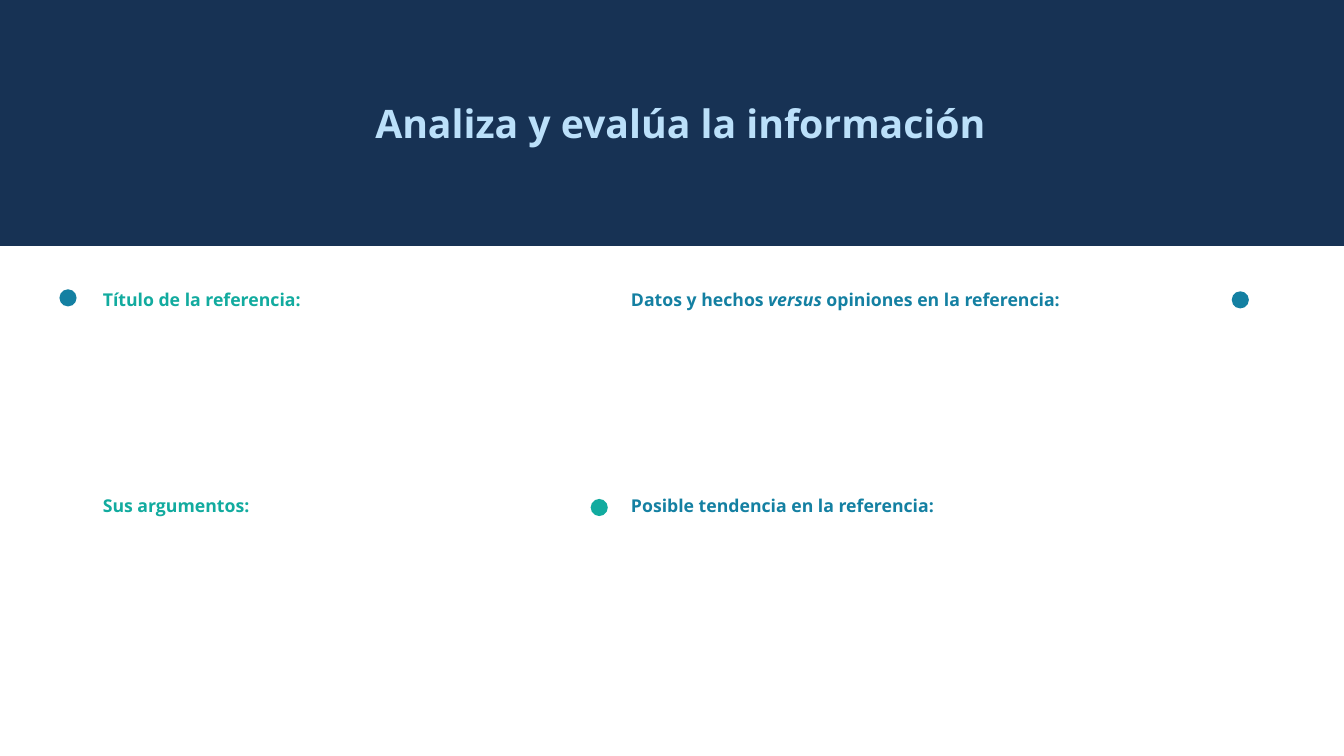
from lxml import etree
from pptx import Presentation
from pptx import util as u
from pptx.dml.color import RGBColor
from pptx.enum import shapes, text
from pptx.oxml.ns import qn

NAVY = RGBColor(0x17, 0x32, 0x54)
SKY = RGBColor(0xBB, 0xE0, 0xFA)
TEAL = RGBColor(0x12, 0xAB, 0x9F)
BLUE = RGBColor(0x14, 0x80, 0xA2)
COLS, ROWS = 80, 45


class Deck:
    """Style and current slide, measured in grid columns and rows."""

    font = "Open Sans"

    def __init__(self, wide, high):
        self.prs = Presentation()
        self.prs.slide_width = u.Inches(wide)
        self.prs.slide_height = u.Inches(high)
        self.col = self.prs.slide_width / COLS
        self.row = self.prs.slide_height / ROWS
        # The comparison layout offers a title and four bodies
        self.slide = self.prs.slides.add_slide(self.prs.slide_layouts[4])

    def box(self, x, y, w, h):
        return (round(x * self.col), round(y * self.row),
                round(w * self.col), round(h * self.row))

    def shape(self, kind, x, y, w, h, color):
        item = self.slide.shapes.add_shape(kind, *self.box(x, y, w, h))
        item.shadow.inherit = False
        item.fill.solid()
        item.fill.fore_color.rgb = color
        item.line.fill.background()
        return item

    def band(self, y, h, color):
        item = self.shape(shapes.MSO_SHAPE.RECTANGLE, 0, y, COLS, h, color)
        item.element.getparent().insert(2, item.element)  # send to back

    def dot(self, x, y, color, size=1.02):
        self.shape(shapes.MSO_SHAPE.OVAL, x, y, size, size, color)

    def holder(self, idx, area, parts, size, color, anchor):
        item = self.slide.placeholders[idx]
        item.left, item.top, item.width, item.height = self.box(*area)
        frame = item.text_frame
        frame.word_wrap = True
        frame.auto_size = text.MSO_AUTO_SIZE.NONE
        frame.vertical_anchor = anchor
        para = frame.paragraphs[0]
        for words, slant in parts:
            run = para.add_run()
            run.text = words
            font = run.font
            font.name, font.size = self.font, u.Pt(size)
            font.bold, font.italic = True, slant
            font.color.rgb = color
        return frame, para

    def title(self, area, words):
        frame, para = self.holder(0, area, [(words, False)], 28, SKY,
                                  text.MSO_ANCHOR.BOTTOM)
        frame.margin_bottom = 0
        para.alignment = text.PP_ALIGN.CENTER

    def body(self, idx, area, parts, color):
        _, para = self.holder(idx, area, parts, 12.6, color,
                              text.MSO_ANCHOR.TOP)
        para.alignment = text.PP_ALIGN.LEFT
        para.line_spacing = 0.7
        para.space_before = u.Pt(10)
        # No bullet, no indent
        props = para._p.get_or_add_pPr()
        props.set("marL", "0")
        props.set("indent", "0")
        etree.SubElement(props, qn("a:buNone"))


def main():
    deck = Deck(13.33, 7.5)

    # Header
    deck.band(-0.18, 14.82, NAVY)
    deck.title((5.52, 3.6, 69.96, 5.1), "Analiza y evalúa la información")

    # Prompts: two columns of two rows
    tops = (17.22, 29.52)
    sides = (
        (5.52, 25.8, TEAL, (
            [("Título de la referencia:", False)],
            [("Sus argumentos:", False)])),
        (36.96, 38.46, BLUE, (
            [("Datos y hechos ", False), ("versus", True),
             (" opiniones en la referencia:", False)],
            [("Posible tendencia en la referencia:", False)])),
    )
    idx = 1
    for left, wide, color, prompts in sides:
        for top, parts in zip(tops, prompts):
            deck.body(idx, (left, top, wide, 1.62), parts, color)
            idx += 1

    # Dots
    for x, y, color in ((3.54, 17.22, BLUE), (35.16, 29.7, TEAL),
                        (73.32, 17.34, BLUE)):
        deck.dot(x, y, color)

    deck.prs.save("out.pptx")


if __name__ == "__main__":
    main()
